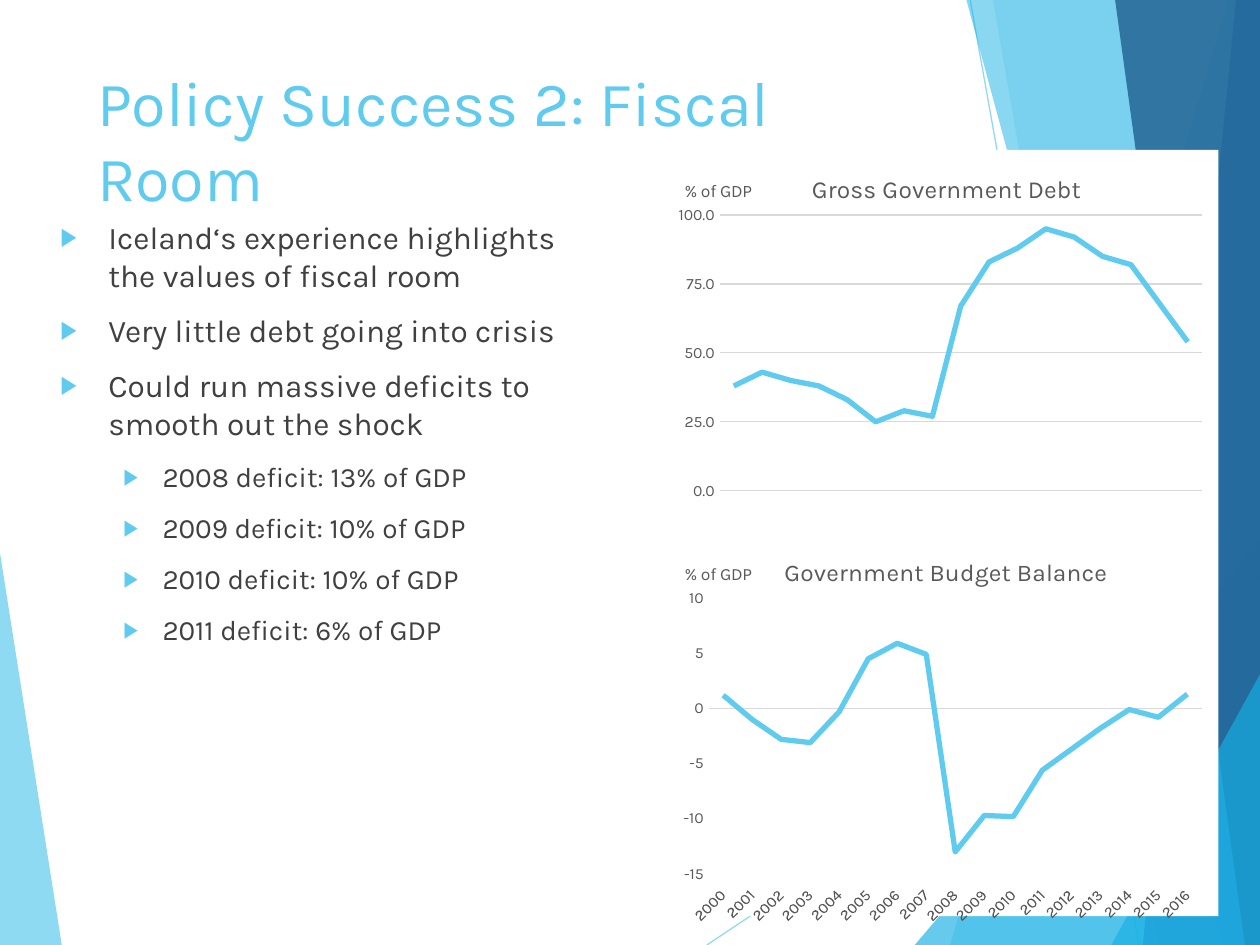
from lxml.etree import SubElement
from pptx import Presentation
from pptx.chart.data import CategoryChartData
from pptx.dml.color import RGBColor
from pptx.enum.chart import XL_CHART_TYPE, XL_MARKER_STYLE, XL_TICK_LABEL_POSITION, XL_TICK_MARK
from pptx.enum.shapes import MSO_CONNECTOR
from pptx.enum.text import MSO_ANCHOR, MSO_AUTO_SIZE, PP_ALIGN
from pptx.oxml import parse_xml
from pptx.oxml.ns import nsdecls, qn
from pptx.util import Inches, Pt

FONT = "Karla"
COLORS = {
    "sky": "5FCBEF", "cyan": "17B0E4", "blue": "2E83C3", "navy": "226292",
    "text": "404040", "label": "595959", "grid": "D9D9D9", "white": "FFFFFF",
}
# colour, opacity in percent, corner points
LEFT_FACET = ("sky", 70, [(0, 4.39), (0.49, 7.5), (0, 7.5)])
RIGHT_FACETS = [
    ("sky", 36, [(9.75, 0), (7.54, 7.5), (10, 7.5), (10, 0)]),
    ("sky", 20, [(7.88, 0), (9.19, 7.5), (10, 7.5), (10, 0)]),
    ("cyan", 66, [(7.26, 7.5), (10, 4.29), (10, 7.5)]),
    ("cyan", 50, [(7.67, 0), (9.7, 7.5), (10, 7.5), (10, 0)]),
    ("blue", 70, [(9.81, 0), (9.07, 7.5), (10, 7.5), (10, 0)]),
    ("navy", 82, [(8.85, 0), (9.88, 7.5), (10, 7.5), (10, 0)]),
    ("cyan", 66, [(8.82, 7.5), (10, 5.35), (10, 7.5)]),
]
RAYS = [((5.61, 7.5), (10, 4.57)), ((7.7, 0), (9.04, 7.5))]
BULLETS = [
    (0, "Iceland‘s experience highlights the values of fiscal room"),
    (0, "Very little debt going into crisis"),
    (0, "Could run massive deficits to smooth out the shock"),
    (1, "2008 deficit: 13% of GDP"),
    (1, "2009 deficit: 10% of GDP"),
    (1, "2010 deficit: 10% of GDP"),
    (1, "2011 deficit: 6% of GDP"),
]
# text size, left margin, hanging indent for each level
LEVELS = [(18, 0.38, -0.38), (16, 0.81, -0.31)]
YEARS = [str(year) for year in range(2000, 2017)]
BALANCE = [1.2, -1, -2.8, -3.1, -0.3, 4.5, 5.9, 4.9, -13,
           -9.7, -9.8, -5.6, -3.7, -1.8, -0.1, -0.8, 1.3]
DEBT = [38, 43, 40, 38, 33, 25, 29, 27, 67, 83, 88, 95, 92, 85, 82, 68, 54]


def rgb(name):
    return RGBColor.from_string(COLORS[name])


def style_font(font, size, color):
    for key, value in {"name": FONT, "size": Pt(size), "bold": False}.items():
        setattr(font, key, value)
    font.color.rgb = rgb(color)


def set_opacity(shape, percent):
    for clr in shape.element.xpath("./p:spPr//a:srgbClr"):
        SubElement(clr, qn("a:alpha"), val=str(percent * 1000))


def add_facet(s, color, opacity, points):
    corners = [(Inches(x), Inches(y)) for x, y in points]
    builder = s.shapes.build_freeform(*corners[0])
    builder.add_line_segments(corners[1:], close=True)
    sp = builder.convert_to_shape()
    sp.shadow.inherit = False
    sp.fill.solid()
    sp.fill.fore_color.rgb = rgb(color)
    sp.line.fill.background()
    set_opacity(sp, opacity)


def add_ray(s, start, end):
    ends = [Inches(v) for v in start + end]
    ray = s.shapes.add_connector(MSO_CONNECTOR.STRAIGHT, *ends)
    ray.line.width = Pt(0.75)
    ray.line.color.rgb = rgb("sky")
    set_opacity(ray, 70)
    SubElement(ray.element.spPr, qn("a:effectLst"))


def place_text(s, sp, box, anchor):
    """Position a placeholder and bring it in front of the decoration."""
    for key, value in zip(("left", "top", "width", "height"), box):
        setattr(sp, key, Inches(value))
    tf = sp.text_frame
    format_values = {"word_wrap": True, "auto_size": MSO_AUTO_SIZE.NONE, "vertical_anchor": anchor}
    for key, value in format_values.items():
        setattr(tf, key, value)
    s.shapes.element.append(sp.element)
    return tf


def add_run(p, text, size, color):
    p.alignment = PP_ALIGN.LEFT
    r = p.add_run()
    r.text = text
    style_font(r.font, size, color)


def add_bullet(p, level, text):
    size, margin, indent = LEVELS[level]
    p.level = level
    p.space_before = Pt(10)
    add_run(p, text, size, "text")
    pPr = p._p.get_or_add_pPr()
    pPr.set("marL", str(Inches(margin)))
    pPr.set("indent", str(Inches(indent)))
    SubElement(SubElement(pPr, qn("a:buClr")), qn("a:srgbClr"), val=COLORS["sky"])
    SubElement(pPr, qn("a:buSzPct"), val="80000")
    SubElement(pPr, qn("a:buChar"), char="▶")


def set_layout(parent, **fractions):
    """Give a chart part a manual place, in fractions of the chart."""
    for old in parent.findall(qn("c:layout")):
        parent.remove(old)
    layout = parse_xml(f"<c:layout {nsdecls('c')}/>")
    parent.insert(0 if parent.find(qn("c:tx")) is None else 1, layout)
    manual = SubElement(layout, qn("c:manualLayout"))
    if "w" in fractions:
        SubElement(manual, qn("c:layoutTarget"), val="inner")
    for key in ("xMode", "yMode"):
        SubElement(manual, qn(f"c:{key}"), val="edge")
    for key, value in fractions.items():
        SubElement(manual, qn(f"c:{key}"), val=str(value))


def set_title(title, text, size, x, y):
    p = title.text_frame.paragraphs[0]
    p.text = text
    style_font(p.runs[0].font, size, "label")
    title.element.xpath(".//a:bodyPr")[0].set("rot", "0")
    set_layout(title.element, x=x, y=y)


def style_axis(axis, labels):
    axis.major_tick_mark = axis.minor_tick_mark = XL_TICK_MARK.NONE
    axis.tick_label_position = labels
    style_font(axis.tick_labels.font, 9, "label")


def grey_line(line):
    line.width = Pt(0.75)
    line.color.rgb = rgb("grid")


def add_line_chart(s, top, height, title, title_x, values, scale, number_format, year_labels, grid, plot_x):
    data = CategoryChartData()
    data.categories = YEARS
    data.add_series("Series 1", values)
    chart = s.shapes.add_chart(XL_CHART_TYPE.LINE, Inches(5.32), Inches(top),
                               Inches(4.35), Inches(height), data).chart
    style_font(chart.font, 10, "label")
    chart.has_legend = False
    set_title(chart.chart_title, title, 14, title_x, 0.05)
    chart.element.find(qn("c:chart")).addnext(parse_xml(
        f'<c:spPr {nsdecls("c", "a")}><a:solidFill><a:srgbClr val="{COLORS["white"]}"/>'
        "</a:solidFill><a:ln><a:noFill/></a:ln></c:spPr>"))
    set_layout(chart.element.xpath(".//c:plotArea")[0],
               x=plot_x, y=0.17, w=round(0.97 - plot_x, 2), h=0.72)

    years, amounts = chart.category_axis, chart.value_axis
    style_axis(years, year_labels)
    years.element.xpath("./c:txPr/a:bodyPr")[0].set("rot", "-2700000") if hasattr(years, "element") else None
    grey_line(years.format.line)
    style_axis(amounts, XL_TICK_LABEL_POSITION.NEXT_TO_AXIS)
    amounts.minimum_scale, amounts.maximum_scale, amounts.major_unit = scale
    amounts.tick_labels.number_format = number_format
    amounts.tick_labels.number_format_is_linked = False
    amounts.format.line.fill.background()
    amounts.has_major_gridlines = grid
    if grid:
        grey_line(amounts.major_gridlines.format.line)
    set_title(amounts.axis_title, "% of GDP", 10, 0.02, 0.07)

    chart.plots[0].vary_by_categories = False
    series = chart.plots[0].series[0]
    series.smooth = False
    series.marker.style = XL_MARKER_STYLE.NONE
    series.format.line.width = Pt(3)
    series.format.line.color.rgb = rgb("sky")


def main():
    prs = Presentation()
    prs.slide_width, prs.slide_height = Inches(10), Inches(7.5)
    s = prs.slides.add_slide(prs.slide_layouts[1])
    add_facet(s, *LEFT_FACET)
    for ray in RAYS:
        add_ray(s, *ray)
    for facet in RIGHT_FACETS:
        add_facet(s, *facet)

    tf = place_text(s, s.shapes.title, (0.67, 0.38, 6.94, 1.44), MSO_ANCHOR.MIDDLE)
    add_run(tf.paragraphs[0], "Policy Success 2: Fiscal Room", 36, "sky")
    tf = place_text(s, s.placeholders[1], (0.38, 1.68, 4.41, 4.94), MSO_ANCHOR.TOP)
    for i, (level, text) in enumerate(BULLETS):
        add_bullet(tf.add_paragraph() if i else tf.paragraphs[0], level, text)

    add_line_chart(s, 4.23, 3.11, "Government Budget Balance", 0.2, BALANCE,
                   (-15, 10, 5), "General", XL_TICK_LABEL_POSITION.LOW, False, 0.07)
    add_line_chart(s, 1.19, 3.04, "Gross Government Debt", 0.25, DEBT,
                   (0, 100, 25), "0.0", XL_TICK_LABEL_POSITION.NONE, True, 0.09)
    prs.save("out.pptx")


if __name__ == "__main__":
    main()
